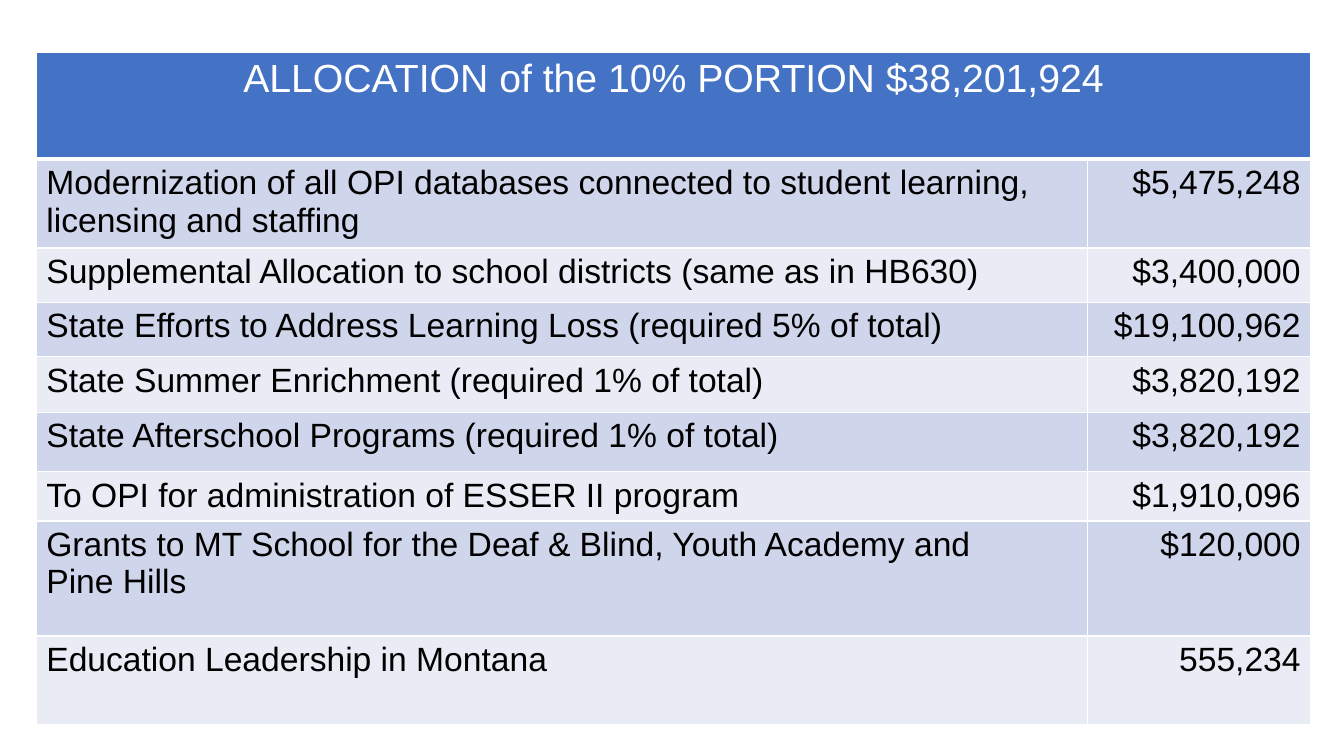
"""Build the slide that lists how the 10% portion is allocated."""
from dataclasses import dataclass

from lxml import etree
from pptx import Presentation
from pptx import util as u
from pptx.dml import color
from pptx.enum import text
from pptx.oxml import ns

SCALE = 9144


@dataclass(frozen=True)
class Theme:
    font: str = "Arial"
    head: str = "4472C4"
    bands: tuple[str, str] = ("CFD5EA", "E9EBF5")
    white: str = "FFFFFF"
    black: str = "000000"
    title: int = 28
    body: int = 24


@dataclass(frozen=True)
class Item:
    label: str
    amount: str
    height: int


THEME = Theme()
HEADER = Item("ALLOCATION of the 10% PORTION $38,201,924", "", 106)
ITEMS = [
    Item("Modernization of all OPI databases connected to student learning, "
         "licensing and staffing", "$5,475,248", 88),
    Item("Supplemental Allocation to school districts (same as in HB630)",
         "$3,400,000", 54),
    Item("State Efforts to Address Learning Loss (required 5% of total)",
         "$19,100,962", 54),
    Item("State Summer Enrichment (required 1% of total)", "$3,820,192", 55),
    Item("State Afterschool Programs (required 1% of total)", "$3,820,192", 59),
    Item("To OPI for administration of ESSER II program", "$1,910,096", 49),
    Item("Grants to MT School for the Deaf & Blind, Youth Academy and\n"
         "Pine Hills", "$120,000", 114),
    Item("Education Leadership in Montana", "555,234", 88),
]
WIDTHS = (1043, 221)


def px(n: int) -> u.Emu:
    return u.Emu(n * SCALE)


def border(cell, base: int) -> None:
    props = cell._tc.get_or_add_tcPr()
    for side, width in (("L", 1), ("R", 1), ("T", 1), ("B", base)):
        line = etree.SubElement(props, ns.qn(f"a:ln{side}"), w=str(u.Pt(width)))
        fill = etree.SubElement(line, ns.qn("a:solidFill"))
        etree.SubElement(fill, ns.qn("a:srgbClr"), val=THEME.white)


def paint(cell, words: str, fill: str, ink: str, size: int,
          align: text.PP_ALIGN, base: int = 1) -> None:
    border(cell, base)
    cell.fill.solid()
    cell.fill.fore_color.rgb = color.RGBColor.from_string(fill)
    cell.text_frame.text = words
    for para in cell.text_frame.paragraphs:
        para.alignment = align
        for run in para.runs:
            run.font.name = THEME.font
            run.font.size = u.Pt(size)
            run.font.bold = False
            run.font.color.rgb = color.RGBColor.from_string(ink)


def main() -> None:
    deck = Presentation()
    deck.slide_width, deck.slide_height = px(1333), px(750)
    slide = deck.slides.add_slide(deck.slide_layouts[6])
    rows = [HEADER, *ITEMS]
    total = sum(row.height for row in rows)
    table = slide.shapes.add_table(
        len(rows), len(WIDTHS), px(36), px(52), px(sum(WIDTHS)), px(total)).table
    for column, width in zip(table.columns, WIDTHS):
        column.width = px(width)
    for line, row in zip(table.rows, rows):
        line.height = px(row.height)

    top = table.cell(0, 0)
    top.merge(table.cell(0, 1))
    for cell, words in ((top, HEADER.label), (table.cell(0, 1), HEADER.amount)):
        paint(cell, words, THEME.head, THEME.white, THEME.title,
              text.PP_ALIGN.CENTER, 3)
    for i, item in enumerate(ITEMS):
        pairs = ((item.label, text.PP_ALIGN.LEFT),
                 (item.amount, text.PP_ALIGN.RIGHT))
        for j, (words, align) in enumerate(pairs):
            paint(table.cell(i + 1, j), words, THEME.bands[i % 2],
                  THEME.black, THEME.body, align)
    deck.save("out.pptx")


if __name__ == "__main__":
    main()
